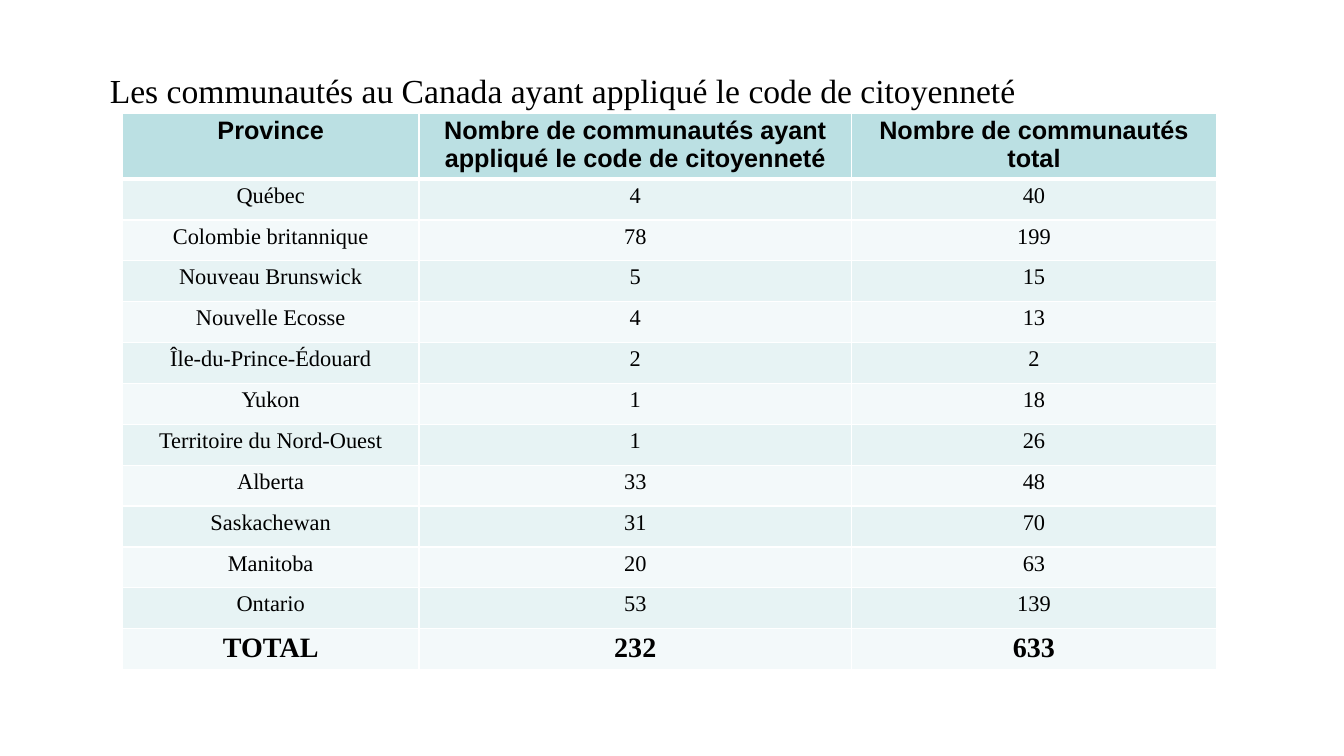
from dataclasses import dataclass

from lxml.etree import SubElement
from pptx import Presentation
from pptx.dml.color import RGBColor as RGB
from pptx.enum.text import MSO_ANCHOR as Anchor, PP_ALIGN as Align
from pptx.oxml.ns import qn
from pptx.util import Pt

# Content
TITLE = "Les communautés au Canada ayant appliqué le code de citoyenneté "
HEADERS = (
    "Province",
    "Nombre de communautés ayant appliqué le code de citoyenneté",
    "Nombre de communautés total",
)
PROVINCES = [
    ("Québec", 4, 40),
    ("Colombie britannique", 78, 199),
    ("Nouveau Brunswick", 5, 15),
    ("Nouvelle Ecosse", 4, 13),
    ("Île-du-Prince-Édouard", 2, 2),
    ("Yukon", 1, 18),
    ("Territoire du Nord-Ouest", 1, 26),
    ("Alberta", 33, 48),
    ("Saskachewan", 31, 70),
    ("Manitoba", 20, 63),
    ("Ontario", 53, 139),
]
TOTAL = ("TOTAL", 232, 633)


@dataclass(frozen=True)
class Theme:
    text: str = "000000"
    header: str = "BBE0E3"
    bands: tuple = ("E7F3F4", "F3F9FA")
    border: str = "FFFFFF"
    serif: str = "Times New Roman"
    sans: str = "Arial"
    title_size: int = 24
    header_size: int = 18
    body_size: int = 16
    total_size: int = 20


T = Theme()

# Layout, in points
SLIDE_W, SLIDE_H = 960, 540
TITLE_BOX = (36, 43.2, 738, 42.5)
TABLE_LEFT, TABLE_TOP = 87.4, 80.9
COL_WIDTHS = (211.9, 309, 260.6)
HEADER_H, ROW_H = 47, 29.2


def write(tf, text, size, font=T.serif, bold=False, spacing=1.0):
    tf.word_wrap = True
    p = tf.paragraphs[0]
    p.alignment = Align.CENTER
    p.line_spacing = spacing
    p.space_before = Pt(0)
    r = p.add_run()
    r.text = text
    r.font.size = Pt(size)
    r.font.name = font
    r.font.bold = bold
    r.font.color.rgb = RGB.from_string(T.text)


def set_borders(cell, bottom=1, top=1):
    tc_pr = cell._tc.get_or_add_tcPr()
    widths = {"a:lnL": 1, "a:lnR": 1, "a:lnT": top, "a:lnB": bottom}
    for tag, width in widths.items():
        ln = SubElement(tc_pr, qn(tag), w=str(Pt(width)))
        fill = SubElement(ln, qn("a:solidFill"))
        SubElement(fill, qn("a:srgbClr"), val=T.border)


prs = Presentation()
prs.slide_width, prs.slide_height = Pt(SLIDE_W), Pt(SLIDE_H)
s = prs.slides.add_slide(prs.slide_layouts[5])

# Title
title = s.shapes.title
title.left, title.top, title.width, title.height = map(Pt, TITLE_BOX)
title.text_frame.vertical_anchor = Anchor.MIDDLE
write(title.text_frame, TITLE, T.title_size)

# Table grid
rows = [HEADERS, *PROVINCES, TOTAL]
heights = [HEADER_H] + [ROW_H] * (len(rows) - 1)
table = s.shapes.add_table(
    len(rows), len(HEADERS), Pt(TABLE_LEFT), Pt(TABLE_TOP),
    Pt(sum(COL_WIDTHS)), Pt(sum(heights)),
).table
for column, width in zip(table.columns, COL_WIDTHS):
    column.width = Pt(width)

# Table cells
header_style = dict(size=T.header_size, font=T.sans, bold=True)
body_style = dict(size=T.body_size)
total_style = dict(size=T.total_size, bold=True)
styles = [header_style] + [body_style] * len(PROVINCES) + [total_style]
for i, (values, height, style) in enumerate(zip(rows, heights, styles)):
    table.rows[i].height = Pt(height)
    color = T.header if i == 0 else T.bands[(i - 1) % 2]
    for j, value in enumerate(values):
        cell = table.cell(i, j)
        write(cell.text_frame, str(value), spacing=0.96, **style)
        set_borders(cell, bottom=3 if i == 0 else 1, top=3 if i == 1 else 1)
        cell.fill.solid()
        cell.fill.fore_color.rgb = RGB.from_string(color)

prs.save("out.pptx")
